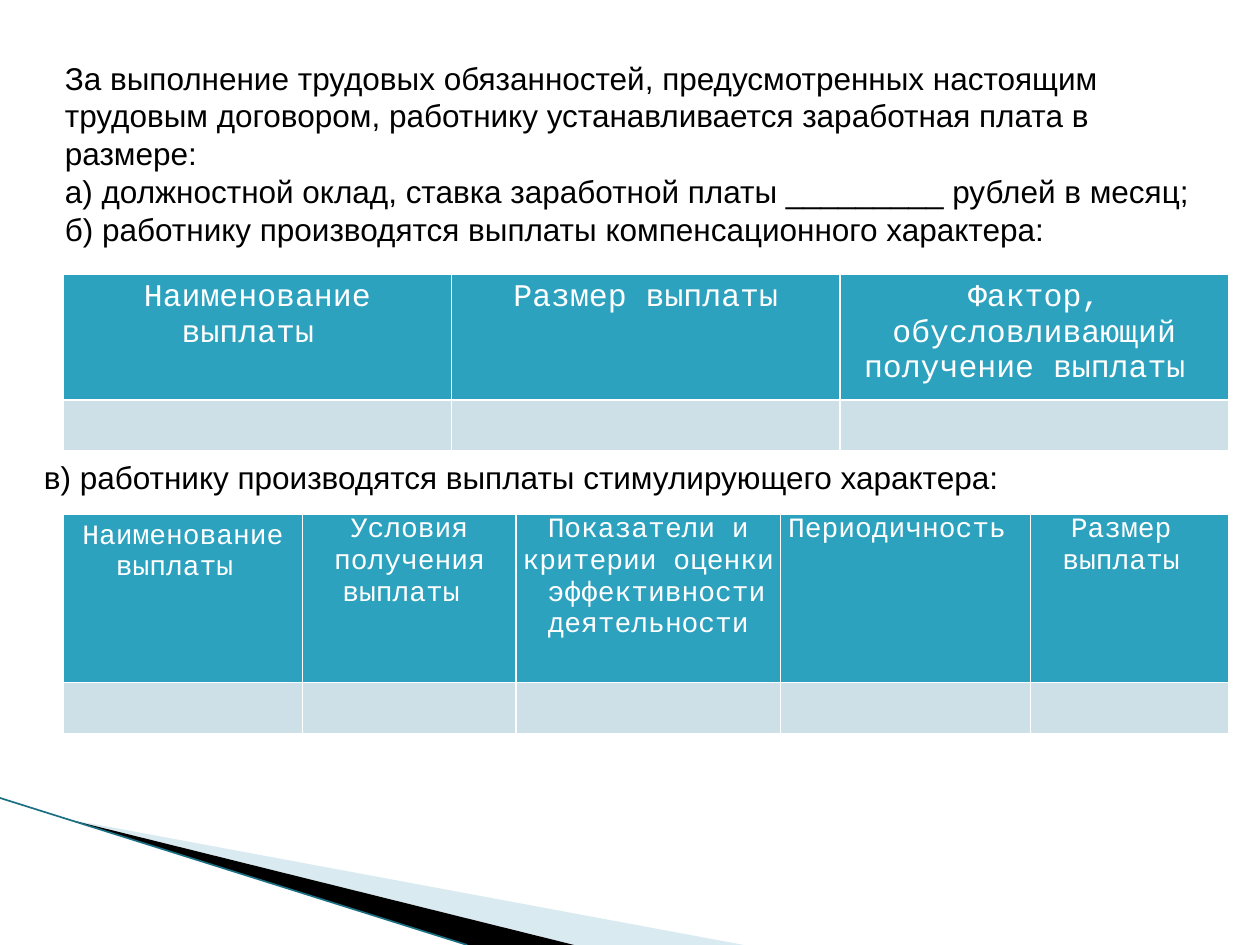
from lxml import etree
from pptx import Presentation
from pptx.dml.color import RGBColor
from pptx.enum import shapes, text
from pptx.oxml import ns
from pptx.util import Pt

WHITE = RGBColor(0xFF, 0xFF, 0xFF)
BLACK = RGBColor(0, 0, 0)
TEAL = RGBColor(0x2D, 0xA2, 0xBF)
DARK_TEAL = RGBColor(0x1B, 0x6F, 0x82)
PALE_BLUE = RGBColor(0xCD, 0xE0, 0xE8)
SOFT_BLUE = RGBColor(0xA0, 0xCB, 0xDC)

INTRO = [
    "За выполнение трудовых обязанностей, предусмотренных настоящим трудовым "
    "договором, работнику устанавливается заработная плата в размере:",
    "а) должностной оклад, ставка заработной платы _________ рублей в месяц;",
    "б) работнику производятся выплаты компенсационного характера:",
]
INCENTIVES = ["в) работнику производятся выплаты стимулирующего характера:"]
COMPENSATION_HEADS = [
    "Наименование выплаты ",
    "Размер выплаты",
    "Фактор, обусловливающий получение выплаты ",
]
INCENTIVE_HEADS = [
    "Наименование выплаты ",
    "Условия получения выплаты ",
    "Показатели и критерии оценки  эффективности деятельности",
    "Периодичность ",
    "Размер \nвыплаты ",
]


def style_text(frame, font, size, color, align):
    for para in frame.paragraphs:
        para.alignment = align
        for span in para.runs:
            span.font.name = font
            span.font.size = Pt(size)
            span.font.bold = False
            span.font.color.rgb = color


def add_wedge(page, points, color, alpha=None):
    builder = page.shapes.build_freeform(*points[0], scale=Pt(1))
    builder.add_line_segments(points[1:], close=True)
    wedge = builder.convert_to_shape()
    wedge.shadow.inherit = False
    wedge.fill.solid()
    wedge.fill.fore_color.rgb = color
    wedge.line.fill.background()
    if alpha is not None:
        tint = wedge.fill._xPr.find(".//" + ns.qn("a:srgbClr"))
        etree.SubElement(tint, ns.qn("a:alpha"), val=str(alpha * 1000))


def add_corner(page, left, top, width, height):
    """Wedges fanning out from the upper left towards the bottom edge."""
    bottom = top + height
    tip = (left + 38, top + 11.5)
    add_wedge(page, [tip, (left + width, bottom), (left + 328, bottom)], SOFT_BLUE, 40)
    add_wedge(page, [tip, (left + 328, bottom), (left + 267, bottom)], BLACK)
    edge = page.shapes.add_connector(
        shapes.MSO_CONNECTOR.STRAIGHT, Pt(left), Pt(top), Pt(left + 267), Pt(bottom))
    edge.line.color.rgb = DARK_TEAL
    edge.line.width = Pt(0.95)
    etree.SubElement(edge._element.spPr, ns.qn("a:effectLst"))


def add_passage(page, lines, left, top, width, height):
    box = page.shapes.add_textbox(Pt(left), Pt(top), Pt(width), Pt(height))
    frame = box.text_frame
    frame.word_wrap = True
    frame.text = "\n".join(lines)
    style_text(frame, "Arial", 18, BLACK, text.PP_ALIGN.LEFT)


def add_borders(cell):
    properties = cell._tc.get_or_add_tcPr()
    for index, side in enumerate(("a:lnL", "a:lnR", "a:lnT", "a:lnB")):
        line = etree.Element(ns.qn(side), w=str(Pt(1)))
        fill = etree.SubElement(line, ns.qn("a:solidFill"))
        etree.SubElement(fill, ns.qn("a:srgbClr"), val=str(WHITE))
        properties.insert(index, line)


def add_payments(page, heads, size, left, top, widths, heights, tight_from):
    """Header row over one blank row; columns from tight_from have no margins."""
    frame = page.shapes.add_table(
        len(heights), len(heads), Pt(left), Pt(top), Pt(sum(widths)), Pt(sum(heights)))
    table = frame.table
    for row, height in zip(table.rows, heights):
        row.height = Pt(height)
    for index, (head, width) in enumerate(zip(heads, widths)):
        table.columns[index].width = Pt(width)
        cell = table.cell(0, index)
        cell.text_frame.text = head
        style_text(cell.text_frame, "Courier New", size, WHITE, text.PP_ALIGN.CENTER)
        if index >= tight_from:
            cell.margin_left = cell.margin_right = 0
            cell.margin_top = cell.margin_bottom = 0
        for row, color in enumerate((TEAL, PALE_BLUE)):
            cell = table.cell(row, index)
            cell.fill.solid()
            cell.fill.fore_color.rgb = color
            add_borders(cell)


def main():
    deck = Presentation()
    deck.slide_width, deck.slide_height = Pt(720), Pt(540)
    page = deck.slides.add_slide(deck.slide_layouts[6])

    # Corner decoration
    add_corner(page, 0, 456, 425, 84)
    # Salary and compensation payments
    add_passage(page, INTRO, 30, 30, 660, 138)
    add_payments(page, COMPENSATION_HEADS, 18, 36, 156.5, [222] * 3, [72, 29.2], 3)
    # Incentive payments
    add_passage(page, INCENTIVES, 18, 258, 682, 30)
    add_payments(page, INCENTIVE_HEADS, 16, 36, 294,
                 [137, 122, 151, 143, 113], [96, 29.2], 1)

    deck.save("out.pptx")


if __name__ == "__main__":
    main()
